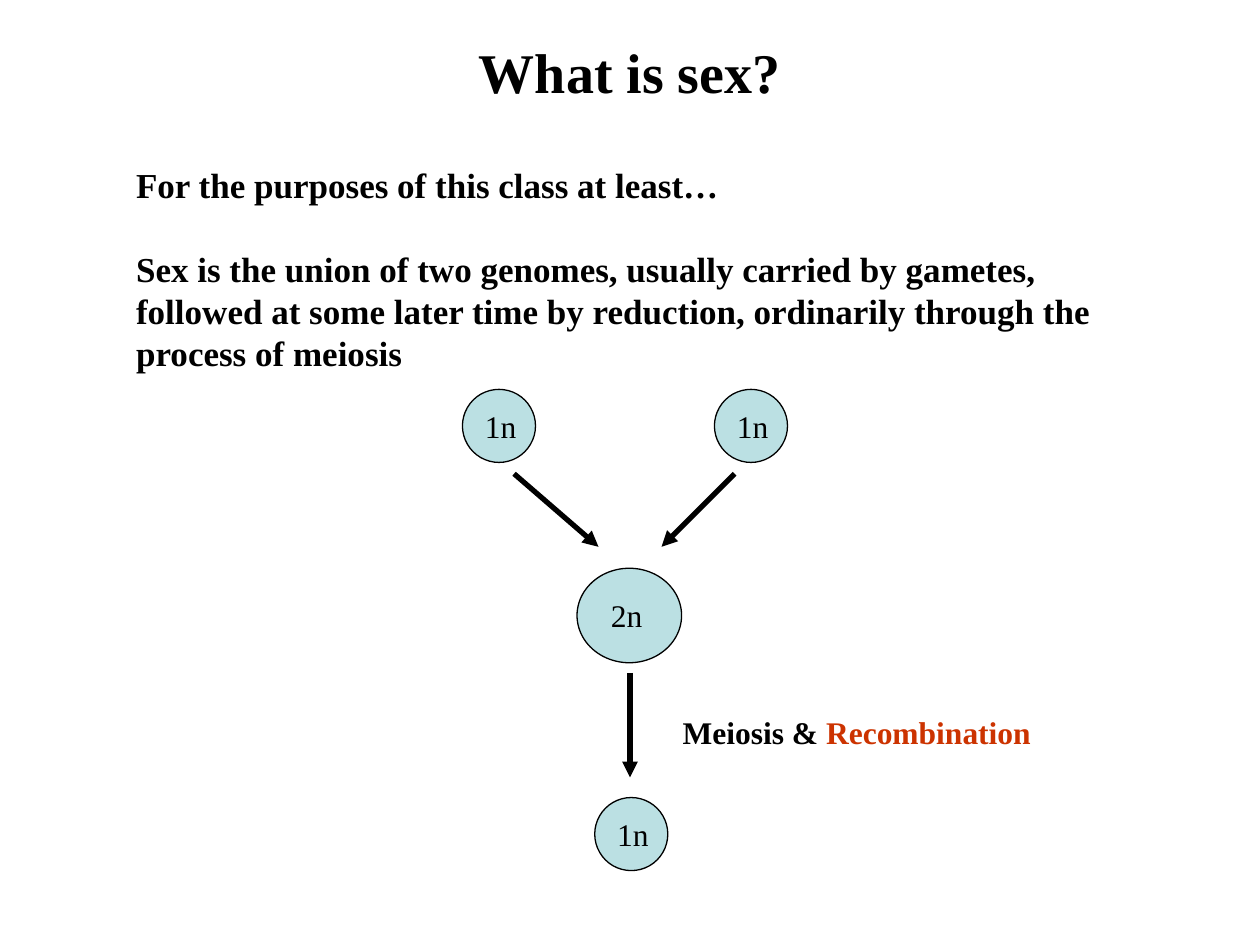
import pptx
import pptx.util
import pptx.dml.color
import pptx.enum.shapes
import pptx.enum.text
import pptx.oxml.ns
from lxml import etree
from pptx.util import Inches, Pt

FONT = "Times New Roman"
BLACK, RED, CELL_BLUE = "000000", "CC3300", "BBE0E3"

# Content
TITLE = "What is sex?"
BODY = [
    "For the purposes of this class at least…",
    "Sex is the union of two genomes, usually carried by gametes, followed at "
    "some later time by reduction, ordinarily through the process of meiosis",
]
PROCESS = [("Meiosis & ", BLACK), ("Recombination", RED)]

# Cells: label, left, top, width, height, label offset (x, y)
CELLS = [
    ("1n", 3.67, 3.09, 0.58, 0.58, 0.08, 0.09),
    ("1n", 5.67, 3.09, 0.58, 0.58, 0.08, 0.09),
    ("2n", 4.58, 4.51, 0.83, 0.75, 0.17, 0.17),
    ("1n", 4.72, 6.33, 0.58, 0.58, 0.08, 0.09),
]
# Arrows: start x, start y, end x, end y
ARROWS = [
    (4.08, 3.76, 4.75, 4.34),
    (5.83, 3.76, 5.25, 4.34),
    (5, 5.34, 5, 6.17),
]


def color(value):
    return pptx.dml.color.RGBColor.from_string(value)


def set_font(font, size, bold=False):
    font.name, font.size, font.bold = FONT, Pt(size), bold
    font.color.rgb = color(BLACK)


def fill_placeholder(box, place, texts, size, align, gap=0):
    box.left, box.top, box.width, box.height = map(Inches, place)
    frame = box.text_frame
    frame.word_wrap = True
    frame.auto_size = pptx.enum.text.MSO_AUTO_SIZE.NONE
    frame.vertical_anchor = pptx.enum.text.MSO_ANCHOR.TOP
    frame.text = "\n".join(texts)
    for index, para in enumerate(frame.paragraphs):
        set_font(para.font, size, bold=True)
        para.alignment = align
        para.space_before = Pt(gap if index else 0)
        properties = para._p.get_or_add_pPr()
        properties.set("marL", "0")
        properties.set("indent", "0")
        bullet = etree.Element(pptx.oxml.ns.qn("a:buNone"))
        properties.insert_element_before(bullet, "a:tabLst", "a:defRPr", "a:extLst")


def add_label(page, left, top, width, spans, bold=False):
    box = page.shapes.add_textbox(*map(Inches, (left, top, width, 0.4)))
    box.text_frame.word_wrap = False
    para = box.text_frame.paragraphs[0]
    set_font(para.font, 18, bold)
    for text, tint in spans:
        span = para.add_run()
        span.text = text
        span.font.color.rgb = color(tint)


def add_cell(page, label, left, top, width, height, shift_x, shift_y):
    cell = page.shapes.add_shape(
        pptx.enum.shapes.MSO_SHAPE.OVAL, *map(Inches, (left, top, width, height)))
    cell.shadow.inherit = False
    cell.fill.solid()
    cell.fill.fore_color.rgb = color(CELL_BLUE)
    cell.line.color.rgb = color(BLACK)
    cell.line.width = Pt(0.75)
    add_label(page, left + shift_x, top + shift_y, 0.45, [(label, BLACK)])


def add_arrow(page, *ends):
    arrow = page.shapes.add_connector(
        pptx.enum.shapes.MSO_CONNECTOR.STRAIGHT, *map(Inches, ends))
    arrow.line.color.rgb = color(BLACK)
    arrow.line.width = Pt(3)
    head = etree.SubElement(arrow.line._get_or_add_ln(), pptx.oxml.ns.qn("a:tailEnd"))
    head.set("type", "triangle")
    etree.SubElement(arrow._element.spPr, pptx.oxml.ns.qn("a:effectLst"))


def main():
    deck = pptx.Presentation()
    deck.slide_width, deck.slide_height = Inches(10), Inches(7.5)
    page = deck.slides.add_slide(deck.slide_layouts[1])

    # Title and definition
    align = pptx.enum.text.PP_ALIGN
    fill_placeholder(page.shapes.title, (0, 0.25, 10, 0.63), [TITLE], 32, align.CENTER)
    fill_placeholder(page.placeholders[1], (0.98, 1.25, 8.1, 1.77), BODY, 20,
                     align.LEFT, gap=24)

    # Life cycle diagram
    for cell in CELLS:
        add_cell(page, *cell)
    for arrow in ARROWS:
        add_arrow(page, *arrow)
    add_label(page, 5.32, 5.61, 2.97, PROCESS, bold=True)

    deck.save("out.pptx")


if __name__ == "__main__":
    main()
